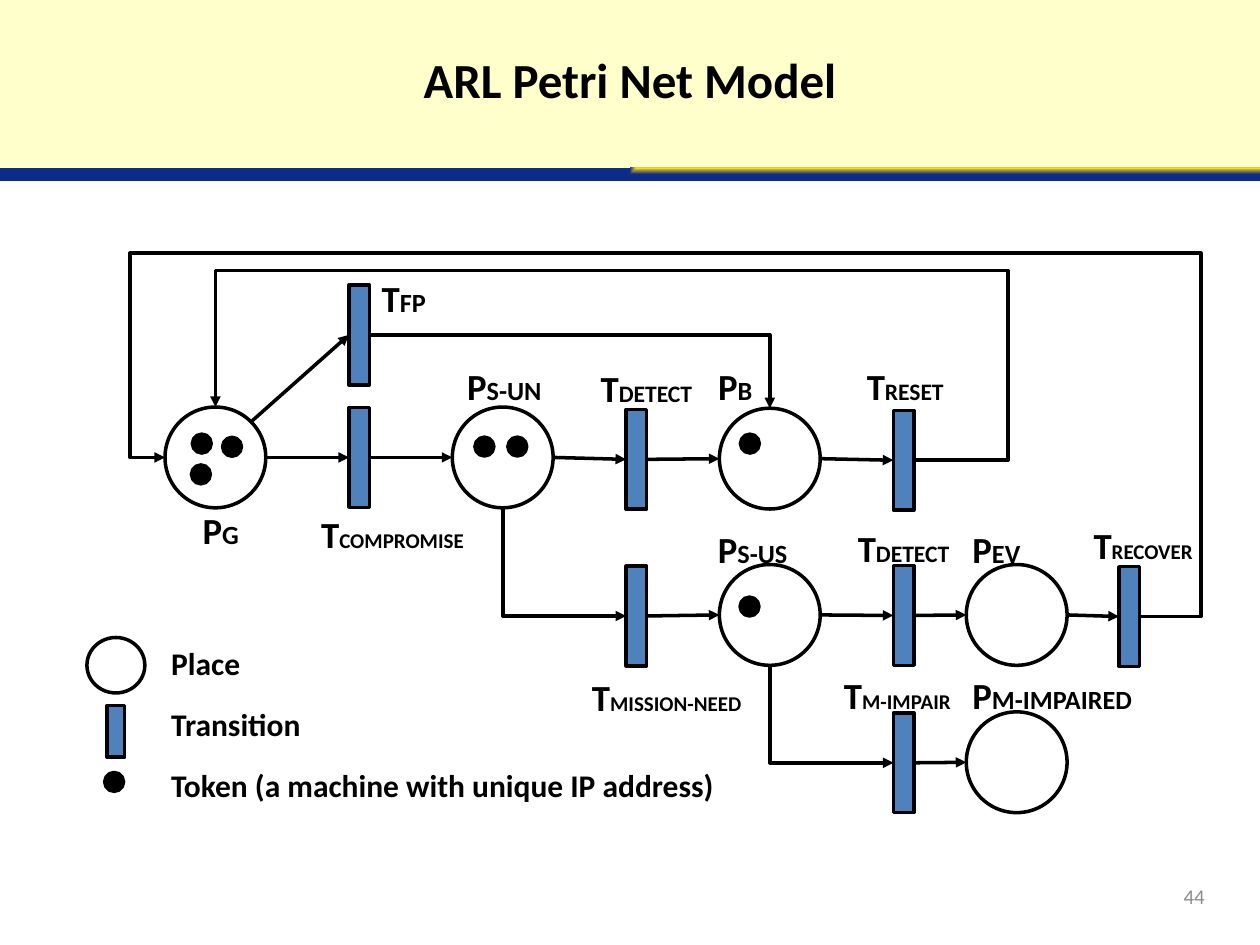
from lxml.etree import SubElement
from pptx import Presentation
from pptx.dml.color import RGBColor
from pptx.enum.shapes import MSO_CONNECTOR as Link, MSO_SHAPE as Preset
from pptx.enum.text import MSO_ANCHOR as Anchor, MSO_AUTO_SIZE as AutoSize, PP_ALIGN as Align
from pptx.oxml.ns import qn
from pptx.util import Pt

COLORS = {"ink": "000000", "bar": "4F81BD", "banner": "FFFFCC",
          "gold": "FED910", "navy": "0D2B88", "number": "8C8C8C"}

# Side of a node: x and y fractions, connection site on a rectangle and on an oval
SIDES = {"top": (0.5, 0, 0, 0), "left": (0, 0.5, 1, 2), "bottom": (0.5, 1, 2, 4),
         "right": (1, 0.5, 3, 6), "upper right": (0.854, 0.146, None, 7)}

PLACES = {"G": (94.3, 232.6), "S-UN": (258.5, 232.6), "B": (411.1, 233.3),
          "S-US": (411.1, 322.6), "EV": (552.2, 322.6), "M-IMPAIRED": (552.2, 406.8)}
TRANSITIONS = {"COMPROMISE": (199.4, 232.9), "FP": (199.4, 162.9), "DETECT": (357.8, 234),
               "RESET": (510.5, 234.5), "MISSION-NEED": (357.8, 323.5),
               "DETECT US": (510.5, 323.2), "RECOVER": (639.4, 323.8),
               "M-IMPAIR": (510.5, 407.4)}
TOKENS = [(109.9, 248.1), (127.2, 249.9), (109.4, 265.7), (271.4, 249.8),
          (290.2, 249.8), (423.1, 248.1), (422.9, 341.2)]
FLOWS = [("G", "COMPROMISE", "S-UN", "DETECT", "B", "RESET"),
         ("MISSION-NEED", "S-US", "DETECT US", "EV", "RECOVER"),
         ("M-IMPAIR", "M-IMPAIRED")]

# Initial, subscript, subscript size, left, top, width
LABELS = [("P", "G", 15, 108.7, 286.6, 35.3), ("P", "S-UN", 15, 259.9, 204.3, 57.6),
          ("P", "B", 15, 403.2, 204.1, 34.6), ("P", "S-US", 15, 403.2, 297.3, 54.7),
          ("P", "EV", 15, 548.6, 297.6, 42.5), ("P", "M-IMPAIRED", 15, 548.6, 381, 106.6),
          ("T", "FP", 15, 211, 154.1, 40.3), ("T", "COMPROMISE", 12, 176.4, 288.7, 97.2),
          ("T", "DETECT", 13.5, 336.2, 205.2, 67.7),
          ("T", "MISSION-NEED", 12, 331.2, 381.8, 100.8),
          ("T", "RESET", 13.5, 488.2, 204.1, 59), ("T", "RECOVER", 12, 617.8, 295.4, 72),
          ("T", "DETECT", 13.5, 483.1, 296.9, 67.7), ("T", "M-IMPAIR", 12, 475.2, 381.1, 76.3)]


def rgb(name):
    return RGBColor.from_string(COLORS[name])


def add_node(slide, preset, left, top, width, height, fill=None, line="ink"):
    node = slide.shapes.add_shape(preset, Pt(left), Pt(top), Pt(width), Pt(height))
    node.shadow.inherit = False
    if fill:
        node.fill.solid()
        node.fill.fore_color.rgb = rgb(fill)
    else:
        node.fill.background()
    if line:
        node.line.color.rgb = rgb(line)
        node.line.width = Pt(2)
    else:
        node.line.fill.background()
    return node


def add_place(slide, left, top, width=57.6, height=57.6):
    return add_node(slide, Preset.OVAL, left, top, width, height)


def add_transition(slide, left, top, width=11.7, height=57):
    return add_node(slide, Preset.RECTANGLE, left, top, width, height, fill="bar")


def add_token(slide, left, top):
    return add_node(slide, Preset.OVAL, left, top, 10.8, 10.8, fill="ink")


def add_text(slide, text, left, top, width, height, size=18, color="ink", bold=True,
             align=Align.LEFT, anchor=Anchor.TOP, wrap=False, sub="", sub_size=15):
    frame = slide.shapes.add_textbox(Pt(left), Pt(top), Pt(width), Pt(height)).text_frame
    frame.word_wrap = wrap
    frame.auto_size = AutoSize.NONE if wrap else AutoSize.SHAPE_TO_FIT_TEXT
    frame.vertical_anchor = anchor
    paragraph = frame.paragraphs[0]
    paragraph.alignment = align
    for part, points in ((text, size), (sub, sub_size)):
        if part:
            run = paragraph.add_run()
            run.text = part
            run.font.name, run.font.size, run.font.bold = "Calibri", Pt(points), bold
            run.font.color.rgb = rgb(color)


def side_point(node, side):
    across, down = SIDES[side][:2]
    return int(node.left + across * node.width), int(node.top + down * node.height)


def add_arrow(slide, source, target, start="right", end="left", kind=Link.STRAIGHT):
    arrow = slide.shapes.add_connector(kind, *side_point(source, start),
                                       *side_point(target, end))
    ends = arrow._element.nvCxnSpPr.cNvCxnSpPr
    for node, side, tag, connect in ((source, start, "a:stCxn", arrow.begin_connect),
                                     (target, end, "a:endCxn", arrow.end_connect)):
        if node.auto_shape_type == Preset.RECTANGLE:
            connect(node, SIDES[side][2])
        else:  # ovals have eight connection sites
            SubElement(ends, qn(tag), id=str(node.shape_id), idx=str(SIDES[side][3]))
    arrow.line.color.rgb = rgb("ink")
    arrow.line.width = Pt(2)
    SubElement(arrow.line._get_or_add_ln(), qn("a:tailEnd"), type="triangle")
    SubElement(arrow._element.spPr, qn("a:effectLst"))
    return arrow


def add_bent_arrow(slide, source, target, start, end, turns=()):
    """Turns are the x, y, x... positions of the middle segments, in points."""
    arrow = add_arrow(slide, source, target, start, end, Link.ELBOW)
    geometry = arrow._element.spPr.find(qn("a:prstGeom"))
    geometry.set("prst", f"bentConnector{len(turns) + 2}")
    guides = geometry.find(qn("a:avLst"))
    origin, goal = side_point(source, start), side_point(target, end)
    for i, turn in enumerate(turns):
        axis = i % 2
        share = (Pt(turn) - origin[axis]) / (goal[axis] - origin[axis])
        SubElement(guides, qn("a:gd"), name=f"adj{i + 1}", fmla=f"val {round(share * 100000)}")
    if start == "bottom":  # leave downwards: quarter turn about the same centre
        width, height = arrow.width, arrow.height
        arrow.left += (width - height) // 2
        arrow.top += (height - width) // 2
        arrow.width, arrow.height = height, width
        xfrm = arrow._element.spPr.find(qn("a:xfrm"))
        xfrm.set("rot", "16200000")
        xfrm.set("flipH", "1")


def add_banner(slide):
    add_node(slide, Preset.RECTANGLE, 0, 0, 720, 97.2, fill="banner", line=None)
    stripe = add_node(slide, Preset.RECTANGLE, 0, 96, 720, 7.2, line=None)
    stripe.fill.gradient()
    for stop, color in zip(stripe.fill.gradient_stops, ("gold", "navy")):
        stop.color.rgb = rgb(color)
    gradient = stripe._element.spPr.find(qn("a:gradFill"))
    gradient.remove(gradient.find(qn("a:lin")))
    glow = SubElement(gradient, qn("a:path"), path="rect")
    SubElement(glow, qn("a:fillToRect"), l="100000", b="100000")


def add_legend(slide):
    add_place(slide, 49.7, 364.3, 33.1, 31.7)
    add_transition(slide, 61.2, 403.2, 10.1, 29.5)
    add_token(slide, 59.8, 441.4)
    meanings = (("Place", 54), ("Transition", 89.3),
                ("Token (a machine with unique IP address)", 326.9))
    for row, (meaning, width) in enumerate(meanings):
        add_text(slide, meaning, 90.7, 364.3 + 35 * row, width, 28.8)


def main():
    deck = Presentation()
    deck.slide_width, deck.slide_height = Pt(720), Pt(540)
    slide = deck.slides.add_slide(deck.slide_layouts[6])

    # Banner, title and page number
    add_banner(slide)
    add_text(slide, "44", 527.8, 497.5, 167.8, 28.8, size=12, color="number", bold=False,
             align=Align.RIGHT, anchor=Anchor.MIDDLE, wrap=True)
    add_text(slide, "ARL Petri Net Model", 49.7, 24.5, 620.6, 78.5, size=28,
             align=Align.CENTER, wrap=True)

    # Places and transitions
    net = {name: add_place(slide, *spot) for name, spot in PLACES.items()}
    net.update({name: add_transition(slide, *spot) for name, spot in TRANSITIONS.items()})

    # Arcs
    for flow in FLOWS:
        for source, target in zip(flow, flow[1:]):
            add_arrow(slide, net[source], net[target])
    add_arrow(slide, net["G"], net["FP"], start="upper right")
    add_bent_arrow(slide, net["S-UN"], net["MISSION-NEED"], "bottom", "left")
    add_bent_arrow(slide, net["S-US"], net["M-IMPAIR"], "bottom", "left")
    add_bent_arrow(slide, net["FP"], net["B"], "right", "top")
    add_bent_arrow(slide, net["RESET"], net["G"], "right", "top", (576, 154.6))
    add_bent_arrow(slide, net["RECOVER"], net["G"], "right", "left", (686, 144.7, 74))

    # Labels and tokens
    for initial, sub, sub_size, left, top, width in LABELS:
        add_text(slide, initial, left, top, width, 32.4, size=21, sub=sub, sub_size=sub_size)
    for spot in TOKENS:
        add_token(slide, *spot)

    add_legend(slide)
    deck.save("out.pptx")


if __name__ == "__main__":
    main()
